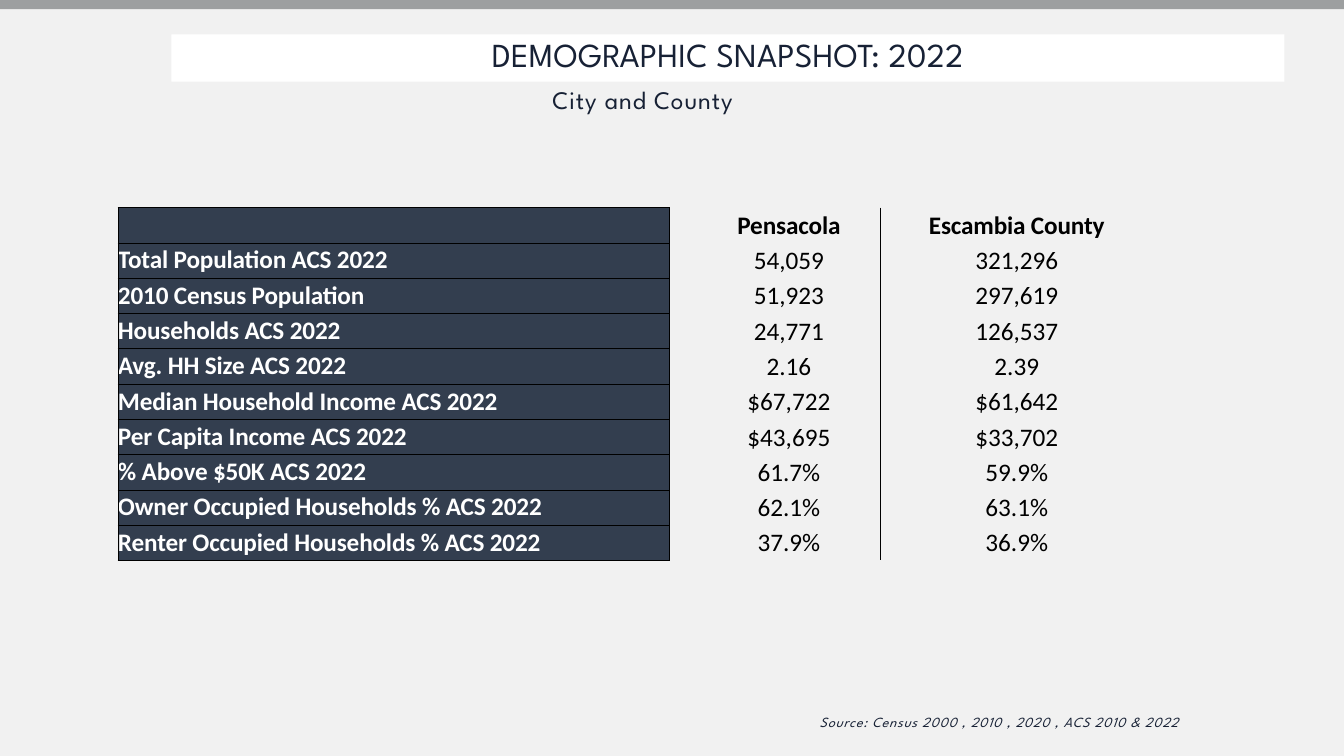
"""Build the demographic snapshot slide with its city and county table."""
from lxml.etree import SubElement
from pptx import Presentation
from pptx.dml.color import RGBColor
from pptx.enum.shapes import MSO_SHAPE
from pptx.enum.text import MSO_ANCHOR, MSO_AUTO_SIZE, PP_ALIGN
from pptx.oxml.ns import qn
from pptx.util import Inches, Pt

TITLE = "DEMOGRAPHIC SNAPSHOT: 2022"
PLACES = "City and County"
SOURCE = "Source: Census 2000 , 2010 , 2020 , ACS 2010 & 2022"
ROWS = [
    ("", "Pensacola", "Escambia County"),
    ("Total Population ACS 2022", "54,059", "321,296"),
    ("2010 Census Population", "51,923", "297,619"),
    ("Households ACS 2022", "24,771", "126,537"),
    ("Avg. HH Size ACS 2022", "2.16", "2.39"),
    ("Median Household Income ACS 2022", "$67,722", "$61,642"),
    ("Per Capita Income ACS 2022", "$43,695", "$33,702"),
    ("% Above $50K ACS 2022", "61.7%", "59.9%"),
    ("Owner Occupied Households % ACS 2022", "62.1%", "63.1%"),
    ("Renter Occupied Households % ACS 2022", "37.9%", "36.9%"),
]
WIDTHS = (5.47, 2.09, 2.41)
INDENTS = (0, 0.28, 0.3)
EDGES = ("LRTB", "LR", "L")
HEIGHT = 0.35
PALE, DARK, NAVY, GREY = "F1F1F1", "333E4F", "172135", "9D9FA0"
WHITE, BLACK = "FFFFFF", "000000"


def paint(fill, color):
    fill.solid()
    fill.fore_color.rgb = RGBColor.from_string(color)


def write(frame, text, size, font, color, gap, before, bold=False):
    para = frame.paragraphs[0]
    para.space_before = Pt(before)
    para.font.size, para.font.name, para.font.bold = Pt(size), font, bold
    para.font.color.rgb = RGBColor.from_string(color)
    if text:
        run = para.add_run()
        run.text = text
        run.font._element.set("spc", str(gap))
    return para


def label(shape, text, size, gap, before):
    frame = shape.text_frame
    frame.margin_left = frame.margin_right = frame.margin_bottom = 0
    frame.margin_top = 0
    frame.vertical_anchor = MSO_ANCHOR.TOP
    frame.auto_size = MSO_AUTO_SIZE.NONE
    frame.word_wrap = True
    return write(frame, text, size, "League Spartan", NAVY, gap, before)


def border(cell, sides):
    props = cell._tc.get_or_add_tcPr()
    for side in "LRTB":
        line = SubElement(props, qn("a:ln" + side), w=str(Pt(0.5)))
        if side in sides:
            fill = SubElement(line, qn("a:solidFill"))
            SubElement(fill, qn("a:srgbClr"), val=BLACK)
        else:
            SubElement(line, qn("a:noFill"))


def style(cell, text, row, col):
    border(cell, EDGES[col])
    paint(cell.fill, PALE if col else DARK)
    cell.margin_left = cell.margin_right = cell.margin_bottom = 0
    cell.margin_top = Inches(0.04 if col else 0.02)
    head = row == 0 or col == 0
    para = write(cell.text_frame, text, 18, "Calibri", BLACK if col else WHITE,
                 -10 if head else 0, 3 if col else 1.1, head)
    if col:
        para.alignment = PP_ALIGN.CENTER
        para.line_spacing = Pt(21.1)
        para._p.get_or_add_pPr().set("marL", str(Inches(INDENTS[col])))


def main():
    deck = Presentation()
    deck.slide_width, deck.slide_height = Inches(13.33), Inches(7.5)
    slide = deck.slides.add_slide(deck.slide_layouts[5])
    paint(slide.background.fill, PALE)
    shapes = slide.shapes

    strip = shapes.add_shape(MSO_SHAPE.RECTANGLE, 0, 0, deck.slide_width, Inches(0.09))
    paint(strip.fill, GREY)
    strip.line.fill.background()
    strip.shadow.inherit = False

    title = shapes.title
    title.left, title.top = Inches(1.7), Inches(0.34)
    title.width, title.height = Inches(11.04), Inches(0.47)
    paint(title.fill, WHITE)
    label(title, TITLE, 24, 20, 0.2).alignment = PP_ALIGN.CENTER

    places = shapes.add_textbox(Inches(5.48), Inches(0.84), Inches(2.2), Inches(0.33))
    label(places, PLACES, 18, 70, 1)
    source = shapes.add_textbox(Inches(8.13), Inches(7.08), Inches(4), Inches(0.19))
    label(source, SOURCE, 10, 62, 0.9).font.italic = True

    table = shapes.add_table(len(ROWS), len(WIDTHS), Inches(1.17), Inches(2.06),
                             Inches(sum(WIDTHS)), Inches(HEIGHT * len(ROWS))).table
    table.first_row = table.horz_banding = False
    for col, width in enumerate(WIDTHS):
        table.columns[col].width = Inches(width)
    for row, texts in enumerate(ROWS):
        table.rows[row].height = Inches(HEIGHT)
        for col, text in enumerate(texts):
            style(table.cell(row, col), text, row, col)
    deck.save("out.pptx")


if __name__ == "__main__":
    main()
